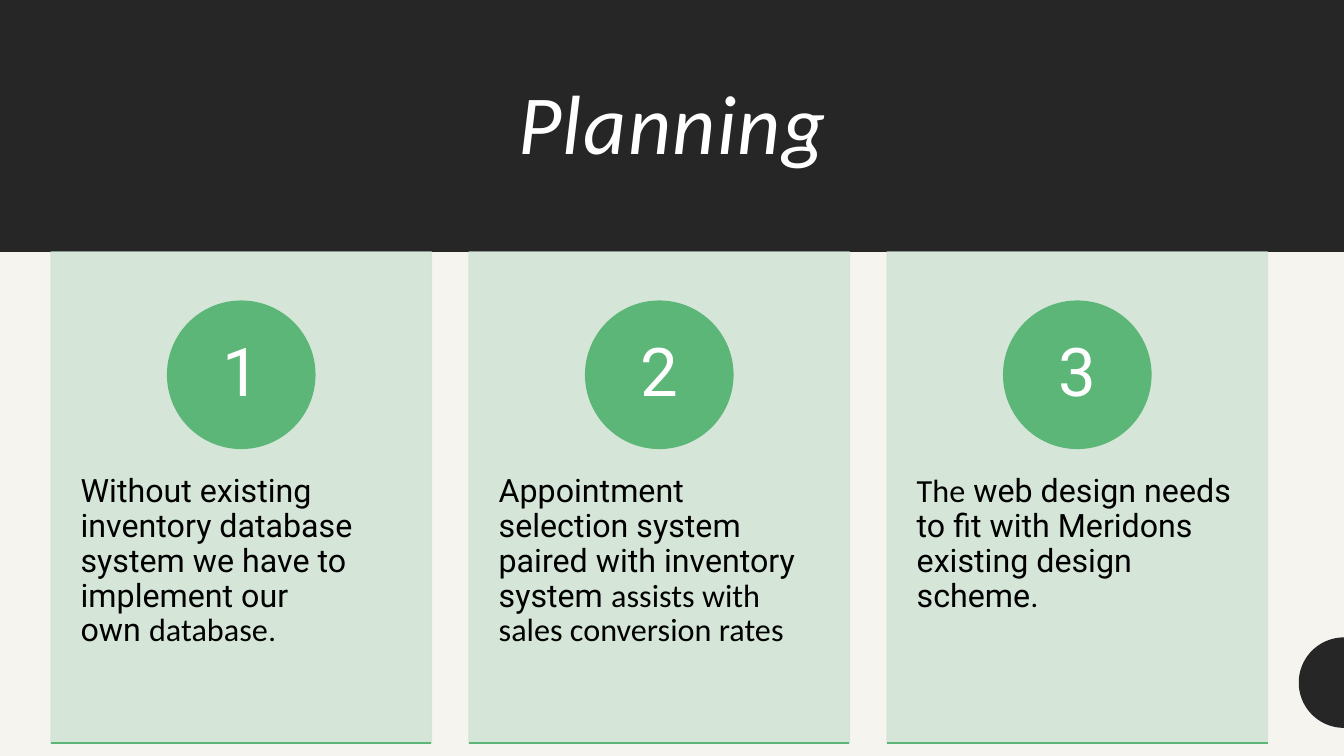
from math import cos, pi, sin

from lxml.etree import SubElement
from pptx import Presentation
from pptx.dml.color import RGBColor
from pptx.enum.shapes import MSO_CONNECTOR as Connector, MSO_SHAPE as Shape
from pptx.enum.text import MSO_ANCHOR as Anchor, PP_ALIGN as Align
from pptx.oxml.ns import qn
from pptx.util import Pt

CREAM = RGBColor(0xF6, 0xF4, 0xEF)
CHARCOAL = RGBColor(0x26, 0x26, 0x26)
MINT = RGBColor(0xD2, 0xE5, 0xD6)
GREEN = RGBColor(0x5C, 0xB6, 0x78)
WHITE = RGBColor(0xFF, 0xFF, 0xFF)
BLACK = RGBColor(0, 0, 0)

SLIDE_WIDTH, SLIDE_HEIGHT = 960, 540
HEADER_HEIGHT = 180
CARD_LEFT, CARD_WIDTH, CARD_HEIGHT, CARD_PITCH = 36.4, 271.8, 350.8, 298.6
CIRCLE_SIZE = 105.2
HARD_SPACE = chr(160)

CARDS = [
    [("Without existing inventory database system we have to implement our own" + HARD_SPACE,
      "Roboto"),
     ("database", "Calibri"), (".", "Roboto")],
    [("Appointment selection system paired with inventory system ", "Roboto"),
     (f"assists{HARD_SPACE}with sales conversion{HARD_SPACE}rates", "Calibri")],
    [("The", "Calibri"),
     (" web design needs to fit with Meridons existing design scheme.", "Roboto")],
]


def set_alpha(parent, percent):
    color = parent.find(".//" + qn("a:srgbClr"))
    SubElement(color, qn("a:alpha")).set("val", str(percent * 1000))


def add_filled(slide, kind, left, top, width, height, color, outlined=False):
    shape = slide.shapes.add_shape(kind, Pt(left), Pt(top), Pt(width), Pt(height))
    shape.shadow.inherit = False
    shape.fill.solid()
    shape.fill.fore_color.rgb = color
    if outlined:
        shape.line.color.rgb = color
        shape.line.width = Pt(1)
    else:
        shape.line.fill.background()
    return shape


def write_text(shape, pieces, size, color, align, anchor, margin_x, margin_y):
    frame = shape.text_frame
    frame.word_wrap = True
    frame.vertical_anchor = anchor
    frame.margin_left = frame.margin_right = Pt(margin_x)
    frame.margin_top = frame.margin_bottom = Pt(margin_y)
    paragraph = frame.paragraphs[0]
    paragraph.alignment = align
    paragraph.line_spacing = 0.9
    for text, font_name in pieces:
        run = paragraph.add_run()
        run.text = text
        run.font.name = font_name
        run.font.size = Pt(size)
        run.font.color.rgb = color
    return paragraph


def add_header(slide, left, top, width, height):
    add_filled(slide, Shape.RECTANGLE, left, top, width, height, CHARCOAL)
    title = slide.shapes.add_textbox(Pt(left + 60), Pt(top + 29.5), Pt(width - 120), Pt(122.4))
    paragraph = write_text(title, [("Planning", "Calibri")], 60, WHITE,
                           Align.CENTER, Anchor.MIDDLE, 7.2, 3.6)
    run = paragraph.runs[0]
    run.font.italic = True
    run._r.get_or_add_rPr().set("spc", "100")


def add_card(slide, left, top, width, height, number, pieces):
    panel = add_filled(slide, Shape.RECTANGLE, left, top, width, height, MINT, True)
    properties = panel._element.spPr
    set_alpha(properties.find(qn("a:solidFill")), 90)
    set_alpha(properties.find(qn("a:ln")), 90)

    body = slide.shapes.add_textbox(Pt(left), Pt(top + 133.3), Pt(width), Pt(210.5))
    write_text(body, pieces, 23, BLACK, Align.LEFT, Anchor.TOP, 21.2, 26)

    circle = add_filled(slide, Shape.OVAL, left + (width - CIRCLE_SIZE) / 2, top + 35.1,
                        CIRCLE_SIZE, CIRCLE_SIZE, GREEN, True)
    write_text(circle, [(str(number), "Roboto")], 48, WHITE,
               Align.CENTER, Anchor.MIDDLE, 8.2, 1)

    bottom = Pt(top + height)
    rule = slide.shapes.add_connector(Connector.STRAIGHT, Pt(left), bottom,
                                      Pt(left + width), bottom)
    rule.line.color.rgb = GREEN
    rule.line.width = Pt(1)
    SubElement(rule._element.spPr, qn("a:effectLst"))


def add_half_disc(slide, right, top, radius, steps=48):
    center = top + radius
    angles = [pi * step / steps for step in range(steps + 1)]
    points = [(Pt(right - radius * sin(angle)), Pt(center - radius * cos(angle)))
              for angle in angles]
    builder = slide.shapes.build_freeform(*points[0])
    builder.add_line_segments(points[1:], close=True)
    half_disc = builder.convert_to_shape()
    half_disc.shadow.inherit = False
    half_disc.fill.solid()
    half_disc.fill.fore_color.rgb = CHARCOAL
    half_disc.line.fill.background()


def build_planning_slide(presentation):
    slide = presentation.slides.add_slide(presentation.slide_layouts[6])
    slide.background.fill.solid()
    slide.background.fill.fore_color.rgb = CREAM
    add_header(slide, 0, 0, SLIDE_WIDTH, HEADER_HEIGHT)
    for index, pieces in enumerate(CARDS):
        add_card(slide, CARD_LEFT + index * CARD_PITCH, HEADER_HEIGHT,
                 CARD_WIDTH, CARD_HEIGHT, index + 1, pieces)
    add_half_disc(slide, SLIDE_WIDTH, 455.3, 32.3)


def main():
    presentation = Presentation()
    presentation.slide_width = Pt(SLIDE_WIDTH)
    presentation.slide_height = Pt(SLIDE_HEIGHT)
    build_planning_slide(presentation)
    presentation.save("out.pptx")


if __name__ == "__main__":
    main()
